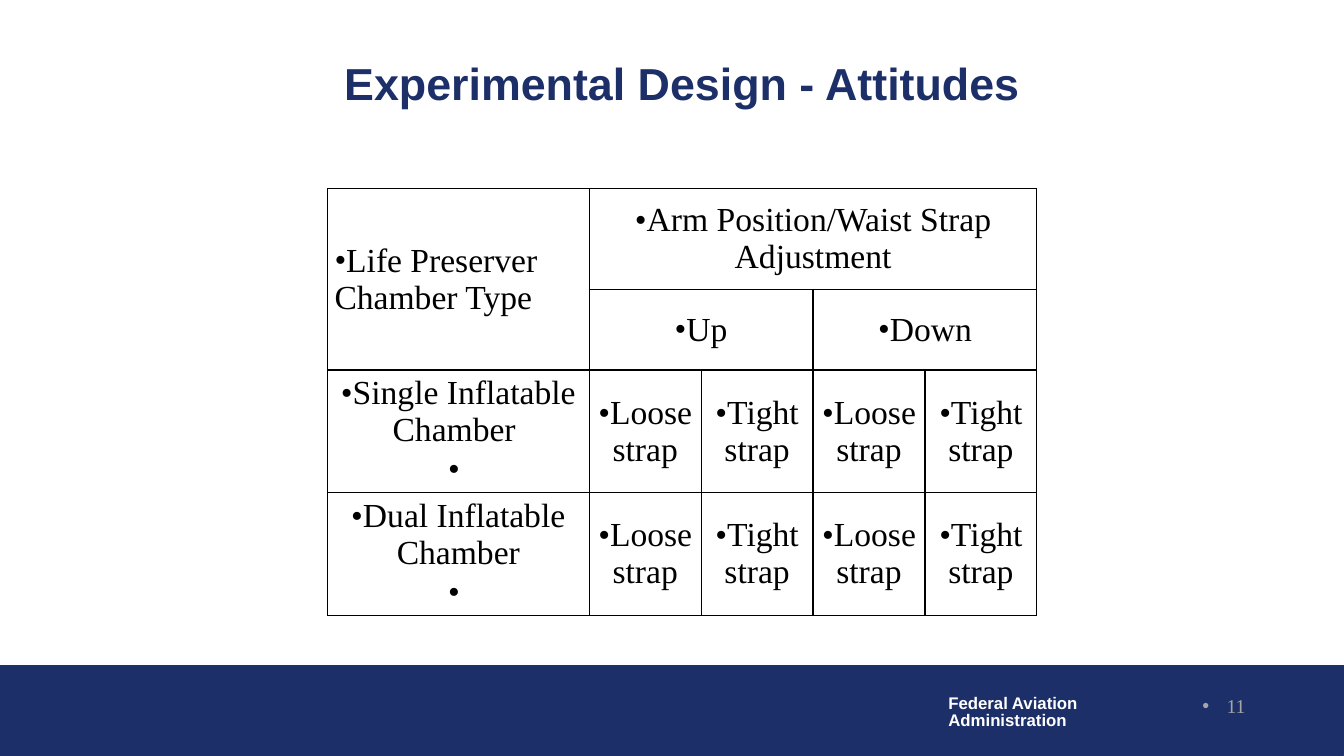
from dataclasses import dataclass

from lxml import etree
from pptx import Presentation
from pptx.dml.color import RGBColor
from pptx.enum.shapes import MSO_SHAPE
from pptx.enum.text import MSO_ANCHOR, PP_ALIGN
from pptx.oxml.ns import qn
from pptx.util import Cm, Pt

LEFT, CENTER, RIGHT = PP_ALIGN.LEFT, PP_ALIGN.CENTER, PP_ALIGN.RIGHT
TOP, MIDDLE = MSO_ANCHOR.TOP, MSO_ANCHOR.MIDDLE
RECTANGLE = MSO_SHAPE.RECTANGLE
COLORS = {"navy": "1D2F68", "white": "FFFFFF", "black": "000000", "gray": "A6A6A6"}
COLUMN_WIDTHS = [6.6] + [2.82] * 4
ROW_HEIGHTS = [0, 0, 0.97, 0.97]
TABLE_HEIGHT = 9.22


@dataclass(frozen=True)
class Style:
    font: str
    size: float
    color: str
    bold: bool = False
    align: PP_ALIGN = LEFT
    line_spacing: float | None = None
    space_after: float | None = None
    bullet_indent: float | None = None
    bullet_font: str = "Arial"


@dataclass(frozen=True)
class Label:
    lines: tuple[str, ...]
    left: float
    top: float
    width: float
    height: float
    style: Style
    anchor: MSO_ANCHOR = TOP
    wrap: bool = True


@dataclass(frozen=True)
class Entry:
    row: int
    column: int
    lines: tuple[str, ...]
    row_span: int = 1
    column_span: int = 1
    align: PP_ALIGN = CENTER


TITLE = Style("Arial", 32, "navy", bold=True, align=CENTER)
AGENCY = Style("Arial", 12, "white", bold=True, line_spacing=0.85)
PAGE_NUMBER = Style("Times New Roman", 14, "gray", align=RIGHT, bullet_indent=0.61)

LABELS = [
    Label(("Federal Aviation", "Administration"), 23.65, 17.4, 3.81, 1.12, AGENCY, wrap=False),
    Label(("Experimental Design - Attitudes",), 5.42, 0.95, 23.55, 2.26, TITLE, MIDDLE),
    Label(("11",), 24.58, 17.35, 7.06, 1.27, PAGE_NUMBER),
]

HEADINGS = [
    Entry(0, 0, ("Life Preserver Chamber Type",), row_span=2, align=LEFT),
    Entry(0, 1, ("Arm Position/Waist Strap Adjustment",), column_span=4),
    Entry(1, 1, ("Up",), column_span=2),
    Entry(1, 3, ("Down",), column_span=2),
]
CHAMBERS = [
    Entry(row, 0, (chamber, " "))
    for row, chamber in enumerate(
        ("Single Inflatable Chamber ", "Dual Inflatable Chamber"), start=2
    )
]
STRAPS = [
    Entry(row, column, (f"{fit} strap",))
    for row in (2, 3)
    for column, fit in enumerate(("Loose", "Tight") * 2, start=1)
]


def rgb(color: str) -> RGBColor:
    return RGBColor.from_string(COLORS[color])


def write(frame, lines: tuple[str, ...], style: Style) -> None:
    for index, line in enumerate(lines):
        paragraph = frame.paragraphs[0] if index == 0 else frame.add_paragraph()
        if style.bullet_indent is not None:
            properties = paragraph._p.get_or_add_pPr()
            properties.set("marL", str(Cm(style.bullet_indent)))
            properties.set("indent", str(-Cm(style.bullet_indent)))
            etree.SubElement(properties, qn("a:buFont"), typeface=style.bullet_font)
            etree.SubElement(properties, qn("a:buChar"), char="•")
        paragraph.alignment = style.align
        if style.line_spacing is not None:
            paragraph.line_spacing = style.line_spacing
        if style.space_after is not None:
            paragraph.space_after = Pt(style.space_after)
        run = paragraph.add_run()
        run.text = line
        run.font.name = style.font
        run.font.size = Pt(style.size)
        run.font.bold = style.bold
        run.font.color.rgb = rgb(style.color)


def draw_footer_band(slide) -> None:
    band = slide.shapes.add_shape(RECTANGLE, Cm(0), Cm(16.76), Cm(33.86), Cm(2.27))
    band.shadow.inherit = False
    band.fill.solid()
    band.fill.fore_color.rgb = rgb("navy")
    band.line.color.rgb = rgb("navy")
    band.line.width = Pt(0.75)


def draw_label(slide, label: Label) -> None:
    box = slide.shapes.add_textbox(
        Cm(label.left), Cm(label.top), Cm(label.width), Cm(label.height)
    )
    frame = box.text_frame
    frame.word_wrap = label.wrap
    frame.vertical_anchor = label.anchor
    write(frame, label.lines, label.style)


def draw_borders(cell) -> None:
    properties = cell._tc.get_or_add_tcPr()
    for side in ("L", "R", "T", "B"):
        border = etree.SubElement(properties, qn(f"a:ln{side}"), w=str(Pt(1)))
        fill = etree.SubElement(border, qn("a:solidFill"))
        etree.SubElement(fill, qn("a:srgbClr"), val=COLORS["black"])


def draw_design_table(slide, entries: list[Entry]) -> None:
    design = slide.shapes.add_table(
        len(ROW_HEIGHTS), len(COLUMN_WIDTHS), Cm(8.25), Cm(4.75),
        Cm(sum(COLUMN_WIDTHS)), Cm(TABLE_HEIGHT),
    )
    table = design.table
    table.first_row = False
    table.horz_banding = False
    for column, width in zip(table.columns, COLUMN_WIDTHS):
        column.width = Cm(width)
    for row, height in zip(table.rows, ROW_HEIGHTS):
        row.height = Cm(height)
    design.height = Cm(TABLE_HEIGHT)
    for cell in table.iter_cells():
        draw_borders(cell)
        cell.fill.background()
        cell.vertical_anchor = MIDDLE
        cell.margin_left = cell.margin_right = Cm(0.18)
        cell.margin_top = cell.margin_bottom = Cm(0)
    for entry in entries:
        cell = table.cell(entry.row, entry.column)
        if entry.row_span > 1 or entry.column_span > 1:
            cell.merge(table.cell(
                entry.row + entry.row_span - 1, entry.column + entry.column_span - 1
            ))
        style = Style(
            "Times New Roman", 24, "black", align=entry.align,
            space_after=1.2, bullet_indent=0, bullet_font="Times New Roman",
        )
        write(cell.text_frame, entry.lines, style)


def main() -> None:
    presentation = Presentation()
    presentation.slide_width = Cm(33.87)
    presentation.slide_height = Cm(19.05)
    slide = presentation.slides.add_slide(presentation.slide_layouts[6])
    draw_footer_band(slide)
    for label in LABELS:
        draw_label(slide, label)
    draw_design_table(slide, HEADINGS + CHAMBERS + STRAPS)
    presentation.save("out.pptx")


if __name__ == "__main__":
    main()
